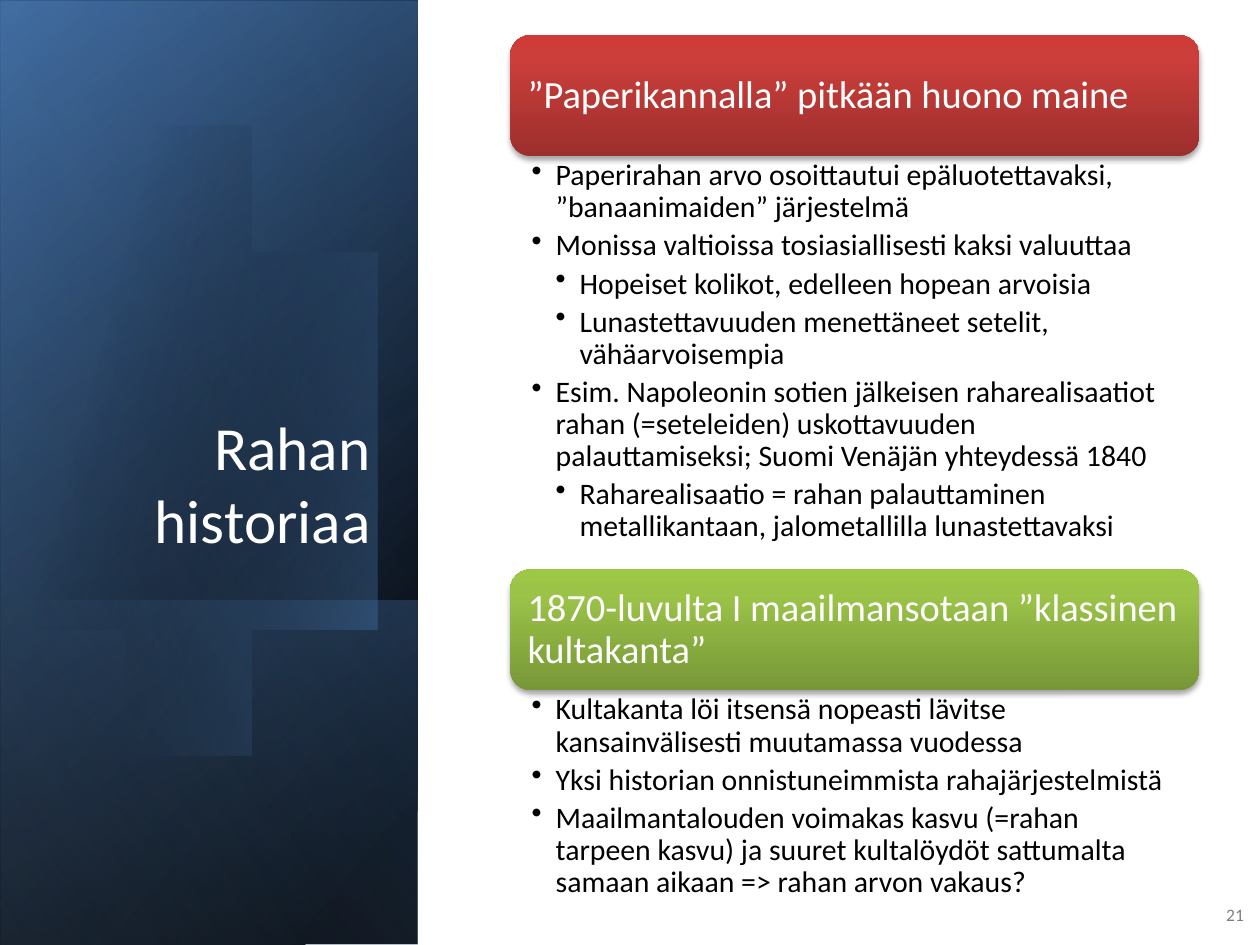
import pptx
import pptx.dml.color
import pptx.enum.shapes
import pptx.enum.text
import pptx.oxml
import pptx.oxml.ns
import pptx.util
from lxml import etree

Inches = pptx.util.Inches
Pt = pptx.util.Pt
Anchor = pptx.enum.text.MSO_ANCHOR
Align = pptx.enum.text.PP_ALIGN
Shapes = pptx.enum.shapes.MSO_SHAPE
NAMESPACE = pptx.oxml.ns.nsdecls("a")


def color(hex_string):
    return pptx.dml.color.RGBColor.from_string(hex_string)


def curve_points(start, control_1, control_2, end, steps=24):
    """Points along a cubic curve, without its start."""
    points = []
    for step in range(1, steps + 1):
        t = step / steps
        weights = ((1 - t) ** 3, 3 * t * (1 - t) ** 2, 3 * t * t * (1 - t), t ** 3)
        points.append(tuple(
            sum(weight * value for weight, value in zip(weights, values))
            for values in zip(start, control_1, control_2, end)))
    return points


class SlideBuilder:
    font = "Calibri"
    bullet_indent = 0.19

    def __init__(self, slide):
        self.slide = slide

    def gradient(self, shape, stops, angle):
        """Fill with (position %, colour, opacity %) stops and drop the outline."""
        stop_xml = "".join(
            f'<a:gs pos="{position * 1000}"><a:srgbClr val="{hex_string}">'
            f'<a:alpha val="{opacity * 1000}"/></a:srgbClr></a:gs>'
            for position, hex_string, opacity in stops)
        fill = pptx.oxml.parse_xml(
            f'<a:gradFill {NAMESPACE} rotWithShape="1"><a:gsLst>{stop_xml}</a:gsLst>'
            f'<a:lin ang="{angle * 60000}" scaled="0"/></a:gradFill>')
        shape.shadow.inherit = False
        shape.line.fill.background()
        shape.fill.background()
        properties = shape._element.spPr
        properties.replace(properties.find(pptx.oxml.ns.qn("a:noFill")), fill)

    def panel(self, left, top, width, height, stops, angle):
        """Rectangle turned a quarter and mirrored."""
        shape = self.slide.shapes.add_shape(
            Shapes.RECTANGLE, Inches(left), Inches(top), Inches(width), Inches(height))
        shape.rotation = 90
        shape._element.spPr.xfrm.set("flipH", "1")
        self.gradient(shape, stops, angle)

    def outline(self, points, stops, angle):
        builder = self.slide.shapes.build_freeform(
            *points[0], scale=float(Inches(1)))
        builder.add_line_segments(points[1:], close=True)
        self.gradient(builder.convert_to_shape(), stops, angle)

    def shadow(self, shape):
        effects = shape._element.spPr.find(pptx.oxml.ns.qn("a:effectLst"))
        effects.append(pptx.oxml.parse_xml(
            f'<a:outerShdw {NAMESPACE} blurRad="{Pt(3.1)}" dist="{Pt(1.8)}" '
            'dir="5400000" rotWithShape="0"><a:srgbClr val="000000">'
            '<a:alpha val="35000"/></a:srgbClr></a:outerShdw>'))

    def frame(self, shape, anchor, horizontal, vertical):
        frame = shape.text_frame
        frame.word_wrap = True
        frame.vertical_anchor = anchor
        frame.margin_left = frame.margin_right = Inches(horizontal)
        frame.margin_top = frame.margin_bottom = Inches(vertical)
        return frame

    def text_run(self, paragraph, text, size, hex_string, align=Align.LEFT,
                 line_spacing=1.0, after=0):
        paragraph.alignment = align
        paragraph.line_spacing = line_spacing
        paragraph.space_after = Pt(after)
        run = paragraph.add_run()
        run.text = text
        run.font.name = self.font
        run.font.size = Pt(size)
        run.font.color.rgb = color(hex_string)

    def text_box(self, left, top, width, height):
        return self.slide.shapes.add_textbox(
            Inches(left), Inches(top), Inches(width), Inches(height))

    def label(self, box, text, size, hex_string, anchor, after=0):
        frame = self.frame(self.text_box(*box), anchor, 0.1, 0.05)
        self.text_run(frame.paragraphs[0], text, size, hex_string, Align.RIGHT,
                      after=after)

    def header(self, left, top, width, height, text, colors):
        shape = self.slide.shapes.add_shape(
            Shapes.ROUNDED_RECTANGLE,
            Inches(left), Inches(top), Inches(width), Inches(height))
        stops = [(position, hex_string, 100)
                 for position, hex_string in zip((0, 80, 100), colors)]
        self.gradient(shape, stops, 270)
        self.shadow(shape)
        # The preset's text area is already inset by its rounded corners
        frame = self.frame(shape, Anchor.MIDDLE, 0.09, 0.09)
        self.text_run(frame.paragraphs[0], text, 22, "FFFFFF", line_spacing=0.9)

    def bullets(self, left, top, width, height, items):
        frame = self.frame(self.text_box(left, top, width, height), Anchor.TOP, 0.17, 0.03)
        for index, (level, text) in enumerate(items):
            paragraph = frame.add_paragraph() if index else frame.paragraphs[0]
            self.text_run(paragraph, text, 17, "000000", line_spacing=0.9, after=3.4)
            paragraph.level = level
            properties = paragraph._p.get_or_add_pPr()
            properties.set("marL", str(Inches(self.bullet_indent * level)))
            properties.set("indent", str(-Inches(self.bullet_indent)))
            etree.SubElement(properties, pptx.oxml.ns.qn("a:buChar"), char="•")


SECTIONS = [
    (0.28, 3.29, "”Paperikannalla” pitkään huono maine", ("9C2F2D", "CB3E3A", "CE3B37"), [
        (1, "Paperirahan arvo osoittautui epäluotettavaksi, ”banaanimaiden” järjestelmä"),
        (1, "Monissa valtioissa tosiasiallisesti kaksi valuuttaa"),
        (2, "Hopeiset kolikot, edelleen hopean arvoisia"),
        (2, "Lunastettavuuden menettäneet setelit, vähäarvoisempia"),
        (1, "Esim. Napoleonin sotien jälkeisen raharealisaatiot rahan (=seteleiden) "
            "uskottavuuden palauttamiseksi; Suomi Venäjän yhteydessä 1840"),
        (2, "Raharealisaatio = rahan palauttaminen metallikantaan, "
            "jalometallilla lunastettavaksi"),
    ]),
    (4.52, 1.74, "1870-luvulta I maailmansotaan ”klassinen kultakanta”",
     ("779737", "9BC348", "9DC746"), [
        (1, "Kultakanta löi itsensä nopeasti lävitse kansainvälisesti muutamassa vuodessa"),
        (1, "Yksi historian onnistuneimmista rahajärjestelmistä"),
        (1, "Maailmantalouden voimakas kasvu (=rahan tarpeen kasvu) ja suuret "
            "kultalöydöt sattumalta samaan aikaan => rahan arvon vakaus?"),
    ]),
]


def main():
    presentation = pptx.Presentation()
    presentation.slide_width = Inches(10)
    presentation.slide_height = Inches(7.5)
    builder = SlideBuilder(presentation.slides.add_slide(presentation.slide_layouts[6]))

    # Layered blue side panel
    side = (-2.09, 2.09, 7.5, 3.31)
    builder.panel(*side, [(8, "000000", 100), (100, "376092", 100)], 50)
    builder.panel(-2.09, 2.11, 7.5, 3.31, [(0, "000000", 0), (99, "4F81BD", 46)], 30)
    builder.panel(0.29, 4.48, 2.74, 3.31, [(2, "4F81BD", 29), (100, "000000", 30)], 130)

    # Tilted oval cut off at the left edge
    top, right, bottom, left = (0.96, 1.14), (2.73, 2.9), (1.71, 5.57), (0.07, 5)
    oval = [top]
    oval += curve_points(top, (1.71, 1.22), (2.44, 1.92), right)
    oval += curve_points(right, (3.07, 4.12), (2.62, 5.31), bottom)
    oval += curve_points(bottom, (1.14, 5.74), (0.53, 5.5), left)
    oval += [(-0.03, 4.88), (-0.25, 1.66), (-0.15, 1.54)]
    oval += curve_points(oval[-1], (0.02, 1.37), (0.22, 1.25), (0.45, 1.18))
    oval += curve_points(oval[-1], (0.62, 1.13), (0.79, 1.12), top)
    builder.outline(oval, [(29, "000000", 0), (100, "4F81BD", 43)], 14)
    builder.panel(*side, [(0, "000000", 0), (99, "95B3D7", 11)], 120)

    # Title and slide number
    builder.label((0.48, 1.84, 2.56, 2.62), "Rahan historiaa", 35, "FFFFFF", Anchor.BOTTOM)
    builder.label((9.6, 7.06, 0.37, 0.4), "21", 10, "808080", Anchor.MIDDLE, after=6)

    # Sections: header bar with its bullets right below
    section_left, section_width, header_height = 4.05, 5.47, 0.96
    for section_top, list_height, heading, colors, items in SECTIONS:
        builder.header(section_left, section_top, section_width, header_height,
                       heading, colors)
        builder.bullets(section_left, section_top + header_height, section_width,
                        list_height, items)

    presentation.save("out.pptx")


if __name__ == "__main__":
    main()
